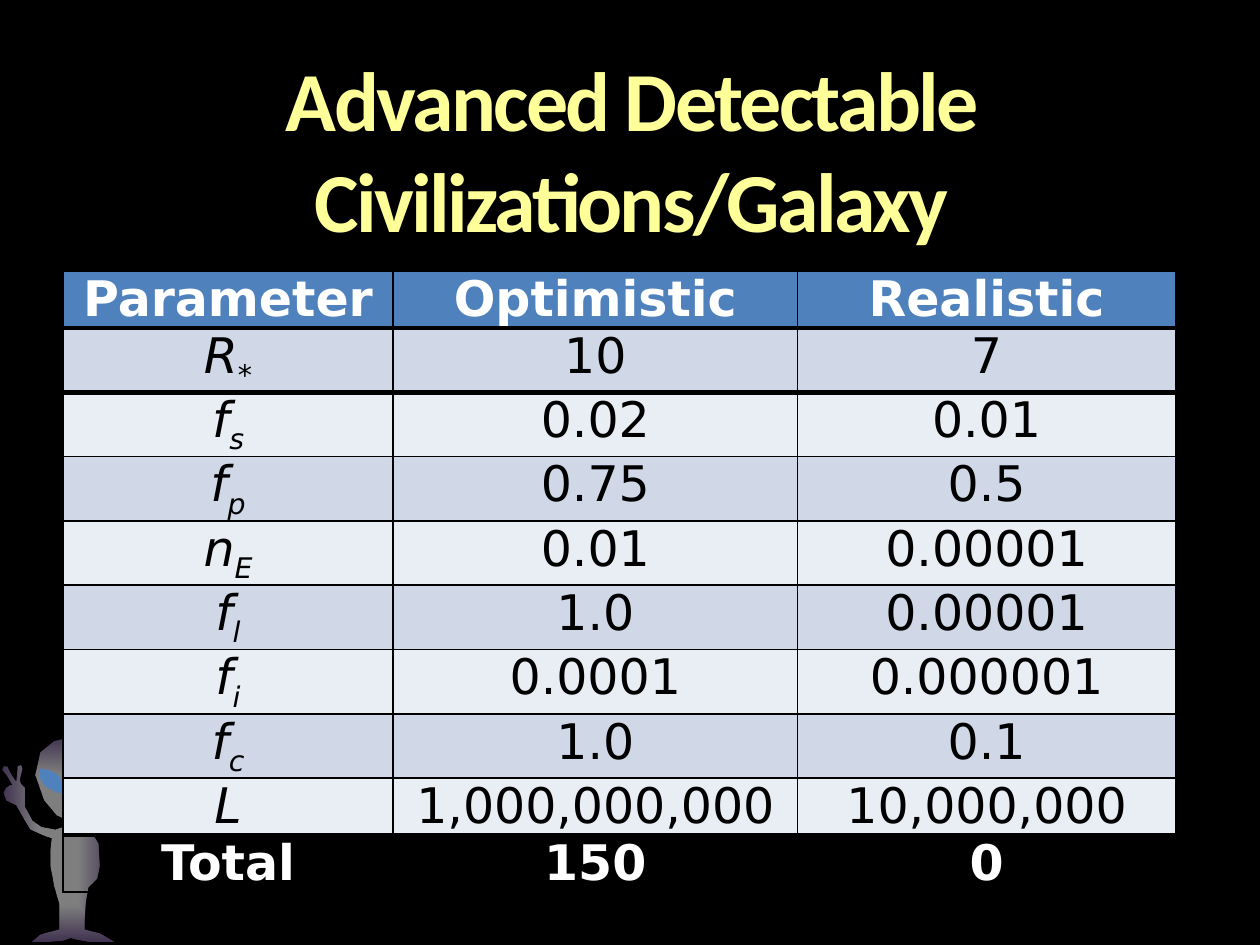
from dataclasses import dataclass

from lxml import etree
from pptx import Presentation
from pptx.dml.color import RGBColor
from pptx.enum import text
from pptx.oxml import parse_xml
from pptx.oxml.ns import qn
from pptx.util import Inches, Pt

NS = "http://schemas.openxmlformats.org/drawingml/2006/main"
HUES = {
    "black": "000000", "white": "FFFFFF", "title": "FFFF99", "blue": "4F81BD",
    "dark": "D0D8E8", "light": "E9EDF4", "purple": "8064A2",
}


@dataclass
class Row:
    name: str
    sub: str
    high: str
    real: str
    fill: str = ""
    ink: str = "black"
    bold: bool = False
    top: int = 1
    base: int = 1


def hue(key: str) -> RGBColor:
    return RGBColor.from_string(HUES[key])


def style(font, ink: str, **vals) -> None:
    for key, val in vals.items():
        setattr(font, key, val)
    font.color.rgb = hue(ink)


def outline(slide, pts: list):
    """Closed outline, with points in hundredths of an inch."""
    pen = slide.shapes.build_freeform(*pts[0], scale=Inches(1) / 100)
    pen.add_line_segments(pts[1:], close=True)
    shape = pen.convert_to_shape()
    shape.shadow.inherit = False
    shape.line.fill.background()
    return shape


def glow(shape) -> None:
    """Half-clear gradient, from a white middle to a purple edge."""
    stops = "".join(
        f'<a:gs pos="{pos}"><a:srgbClr val="{HUES[key]}"><a:alpha val="50000"/></a:srgbClr></a:gs>'
        for pos, key in ((0, "white"), (35000, "white"), (100000, "purple")))
    grad = parse_xml(
        f'<a:gradFill xmlns:a="{NS}" rotWithShape="1"><a:gsLst>{stops}</a:gsLst>'
        '<a:path path="shape"><a:fillToRect l="50000" t="50000" r="50000" b="50000"/>'
        '</a:path></a:gradFill>')
    shape.element.spPr.find(qn("a:custGeom")).addnext(grad)


def edges(cell, top: int, base: int) -> None:
    """Black borders; they must come before the fill."""
    props = cell._tc.get_or_add_tcPr()
    sides = {"lnL": 1, "lnR": 1, "lnT": top, "lnB": base}
    for spot, (tag, wide) in enumerate(sides.items()):
        line = etree.Element(qn(f"a:{tag}"), w=str(Pt(wide)))
        fill = etree.SubElement(line, qn("a:solidFill"))
        etree.SubElement(fill, qn("a:srgbClr"), val=HUES["black"])
        props.insert(spot, line)


def write(cell, row: Row, word: str, sub: str = "", slant: bool = False) -> None:
    cell.margin_left = cell.margin_right = Inches(0.09)
    cell.margin_top = cell.margin_bottom = 0
    if row.fill:
        cell.fill.solid()
        cell.fill.fore_color.rgb = hue(row.fill)
    else:
        cell.fill.background()
    edges(cell, row.top, row.base)
    para = cell.text_frame.paragraphs[0]
    para.alignment = text.PP_ALIGN.CENTER
    for part in filter(None, (word, sub)):
        run = para.add_run()
        run.text = part
        style(run.font, row.ink, name="DejaVu Sans", size=Pt(28), bold=row.bold, italic=slant)
    if sub:
        run._r.get_or_add_rPr().set("baseline", "-25000")


BODY = [
    (56, 585), (70, 588), (80, 597), (84, 612), (82, 627), (71, 642), (60, 653),
    (65, 656), (73, 661), (78, 669), (79, 687), (77, 697), (70, 704), (68, 716),
    (67, 730), (67, 737), (79, 740), (91, 747), (70, 747), (60, 745), (56, 744),
    (50, 746), (39, 747), (25, 747), (32, 741), (39, 739), (47, 737), (47, 717),
    (43, 703), (40, 687), (40, 674), (41, 665), (35, 663), (24, 658), (17, 646),
    (13, 639), (5, 635), (3, 629), (5, 625), (8, 623), (10, 623), (6, 616),
    (2, 611), (3, 608), (6, 608), (9, 614), (13, 620), (14, 611), (14, 608),
    (17, 607), (18, 610), (16, 619), (17, 622), (20, 625), (20, 629), (20, 640),
    (26, 651), (33, 656), (44, 658), (53, 655), (54, 651), (45, 647), (35, 635),
    (28, 615), (32, 597), (43, 588),
]
EYE = [(31, 610), (39, 611), (46, 615), (50, 622), (51, 631), (43, 628), (36, 624), (32, 618)]

ROWS = [
    Row("Parameter", "", "Optimistic", "Realistic", "blue", "white", True, base=3),
    Row("R", "*", "10", "7", "dark", top=3, base=3),
    Row("f", "s", "0.02", "0.01", "light", top=3),
    Row("f", "p", "0.75", "0.5", "dark"),
    Row("n", "E", "0.01", "0.00001", "light"),
    Row("f", "l", "1.0", "0.00001", "dark"),
    Row("f", "i", "0.0001", "0.000001", "light"),
    Row("f", "c", "1.0", "0.1", "dark"),
    Row("L", "", "1,000,000,000", "10,000,000", "light", base=3),
    Row("Total", "", "150", "0", "", "white", True, top=3),
]
COLS = (2.62, 3.21, 3)
HIGH = 0.41


def main() -> None:
    deck = Presentation()
    deck.slide_width, deck.slide_height = Inches(10), Inches(7.5)
    slide = deck.slides.add_slide(deck.slide_layouts[5])
    slide.background.fill.solid()
    slide.background.fill.fore_color.rgb = hue("black")

    # Alien in the corner
    glow(outline(slide, BODY))
    eye = outline(slide, EYE)
    eye.fill.solid()
    eye.fill.fore_color.rgb = hue("blue")

    # Title
    title = slide.shapes.title
    title.left, title.top, title.width, title.height = map(Inches, (0.51, 0.33, 9, 1.25))
    frame = title.text_frame
    frame.auto_size = text.MSO_AUTO_SIZE.NONE
    frame.vertical_anchor = text.MSO_ANCHOR.TOP
    para = frame.paragraphs[0]
    para.alignment = text.PP_ALIGN.CENTER
    run = para.add_run()
    run.text = "Advanced Detectable Civilizations/Galaxy"
    style(run.font, "title", name="Calibri", size=Pt(48), bold=True)
    run._r.get_or_add_rPr().set("spc", "-150")

    # Table of parameters
    table = slide.shapes.add_table(
        len(ROWS), len(COLS), Inches(0.5), Inches(2.15),
        Inches(sum(COLS)), Inches(HIGH * len(ROWS))).table
    table.first_row = table.horz_banding = False
    for col, wide in zip(table.columns, COLS):
        col.width = Inches(wide)
    for line, row in zip(table.rows, ROWS):
        line.height = Inches(HIGH)
        name, high, real = line.cells
        write(name, row, row.name, row.sub, slant=not row.bold)
        write(high, row, row.high)
        write(real, row, row.real)

    deck.save("out.pptx")


if __name__ == "__main__":
    main()
